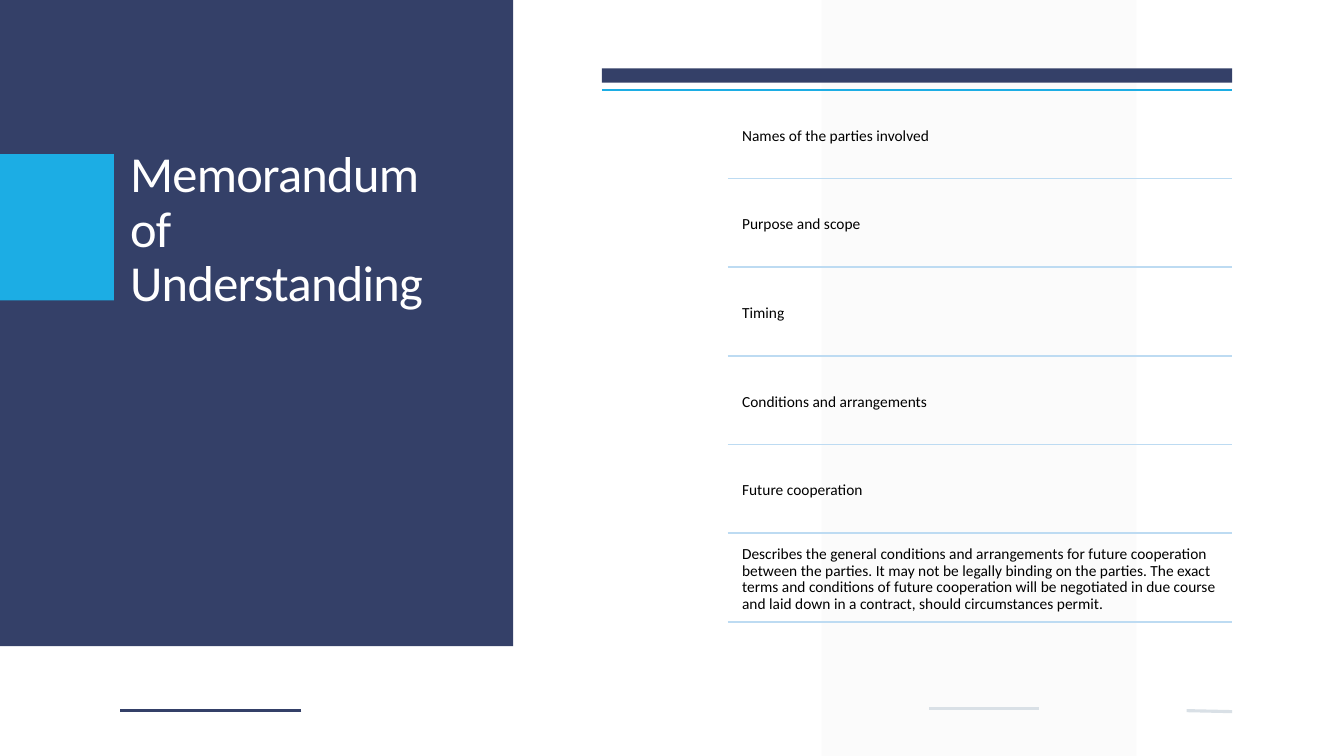
from dataclasses import dataclass

from lxml import etree
from pptx import Presentation
from pptx import util as u
from pptx.dml.color import RGBColor
from pptx.enum import shapes as es, text as et
from pptx.oxml.ns import qn

NAVY = RGBColor(0x34, 0x40, 0x68)
CYAN = RGBColor(0x1C, 0xAD, 0xE4)
PALE = RGBColor(0xBD, 0xDB, 0xF2)
MIST = RGBColor(0xD9, 0xE0, 0xE6)
GREY = RGBColor(0xF2, 0xF2, 0xF2)
WHITE = RGBColor(0xFF, 0xFF, 0xFF)
BLACK = RGBColor(0, 0, 0)

# List grid, in inches
TOP, STEP = 0.89, 0.88
EDGE, RIGHT = 7.22, 12.22
INDENT, GAP, HIGH = 0.09, 0.04, 0.84


@dataclass
class Panel:
    x: float
    y: float
    w: float
    h: float
    fill: RGBColor
    kind: es.MSO_SHAPE = es.MSO_SHAPE.RECTANGLE
    alpha: int = 100


@dataclass
class Rule:
    x1: float
    y1: float
    x2: float
    y2: float
    color: RGBColor
    width: float = 1.25


PANELS = [
    Panel(8.15, 0, 3.12, 7.5, GREY, es.MSO_SHAPE.PARALLELOGRAM, 30),
    Panel(0, 0, 5.09, 6.41, NAVY),
    Panel(0, 1.53, 1.13, 1.45, CYAN),
    Panel(5.97, 0.68, 6.25, 0.14, NAVY),
]

RULES = [
    Rule(2.99, 7.05, 1.19, 7.05, NAVY, 2.25),
    Rule(10.3, 7.03, 9.21, 7.03, MIST, 2.25),
    Rule(RIGHT, 7.06, 11.77, 7.05, MIST, 2.25),
    Rule(5.97, TOP, RIGHT, TOP, CYAN),
]

ITEMS = [
    "Names of the parties involved",
    "Purpose and scope",
    "Timing",
    "Conditions and arrangements",
    "Future cooperation",
    "Describes the general conditions and arrangements for future cooperation "
    "between the parties. It may not be legally binding on the parties. "
    "The exact terms and conditions of future cooperation will be negotiated "
    "in due course and laid down in a contract, should circumstances permit.",
]


def place(shape, x: float, y: float, w: float, h: float) -> None:
    shape.left, shape.top = u.Inches(x), u.Inches(y)
    shape.width, shape.height = u.Inches(w), u.Inches(h)


def draw_panel(slide, panel: Panel) -> None:
    box = [u.Inches(n) for n in (panel.x, panel.y, panel.w, panel.h)]
    shape = slide.shapes.add_shape(panel.kind, *box)
    shape.shadow.inherit = False
    shape.fill.solid()
    shape.fill.fore_color.rgb = panel.fill
    shape.line.fill.background()
    if panel.kind == es.MSO_SHAPE.PARALLELOGRAM:
        shape.adjustments[0] = 0
    if panel.alpha < 100:
        color = next(shape.element.iter(qn("a:srgbClr")))
        etree.SubElement(color, qn("a:alpha"), val=str(panel.alpha * 1000))


def draw_rule(slide, rule: Rule) -> None:
    ends = [u.Inches(n) for n in (rule.x1, rule.y1, rule.x2, rule.y2)]
    line = slide.shapes.add_connector(es.MSO_CONNECTOR.STRAIGHT, *ends)
    line.line.color.rgb = rule.color
    line.line.width = u.Pt(rule.width)
    etree.SubElement(line.element.spPr, qn("a:effectLst"))


def write(shape, words: str, *, size: float, color: RGBColor,
          anchor: et.MSO_ANCHOR, inset: float, after: float = 0,
          track: float = 0) -> None:
    frame = shape.text_frame
    frame.word_wrap = True
    frame.auto_size = et.MSO_AUTO_SIZE.NONE
    frame.vertical_anchor = anchor
    frame.margin_left = frame.margin_right = u.Inches(inset)
    frame.margin_top = frame.margin_bottom = u.Inches(0.05)
    para = frame.paragraphs[0]
    para.alignment = et.PP_ALIGN.LEFT
    para.line_spacing = 0.9
    para.space_after = u.Pt(after)
    run = para.add_run()
    run.text = words
    run.font.name = "Calibri"
    run.font.size = u.Pt(size)
    run.font.color.rgb = color
    if track:
        props = next(shape.element.iter(qn("a:rPr")))
        props.set("spc", str(int(track * 100)))


def main() -> None:
    deck = Presentation()
    deck.slide_width, deck.slide_height = u.Inches(13.33), u.Inches(7.5)
    slide = deck.slides.add_slide(deck.slide_layouts[5])

    # Backdrop and rules
    for panel in PANELS:
        draw_panel(slide, panel)
    for rule in RULES:
        draw_rule(slide, rule)

    # Title, raised above the panels
    title = slide.shapes.title
    place(title, 1.19, 0.86, 3.36, 2.29)
    write(title, "Memorandum of Understanding", size=36, color=WHITE,
          anchor=et.MSO_ANCHOR.BOTTOM, inset=0.1, track=-0.5)
    title.element.getparent().append(title.element)

    # List rows, each closed by a rule
    left = EDGE + INDENT
    for row, item in enumerate(ITEMS):
        y = TOP + row * STEP
        box = slide.shapes.add_textbox(0, 0, 0, 0)
        place(box, left, y + GAP, RIGHT - left, HIGH)
        write(box, item, size=11, color=BLACK, inset=0.05,
              anchor=et.MSO_ANCHOR.MIDDLE, after=4)
        draw_rule(slide, Rule(EDGE, y + STEP, RIGHT, y + STEP, PALE))

    deck.save("out.pptx")


if __name__ == "__main__":
    main()
